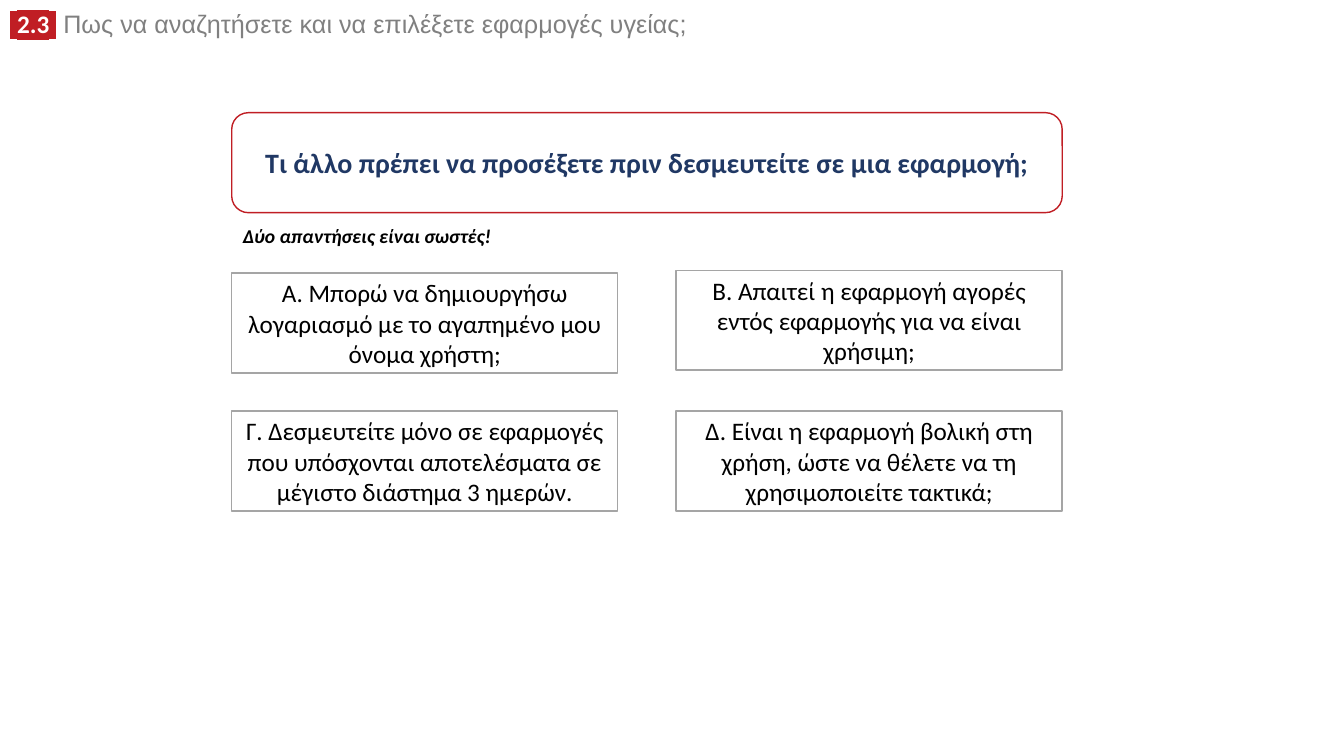
import dataclasses

import lxml.etree
import pptx
import pptx.dml.color
import pptx.enum.shapes
import pptx.enum.text
import pptx.oxml.ns
import pptx.util

Cm = pptx.util.Cm
Pt = pptx.util.Pt
RGB = pptx.dml.color.RGBColor.from_string
Align = pptx.enum.text.PP_ALIGN
Anchor = pptx.enum.text.MSO_ANCHOR
AutoSize = pptx.enum.text.MSO_AUTO_SIZE
Shape = pptx.enum.shapes.MSO_SHAPE


@dataclasses.dataclass(frozen=True)
class Theme:
    white: str = "FFFFFF"
    black: str = "000000"
    red: str = "C01E24"
    navy: str = "203864"
    title_grey: str = "808080"
    border_grey: str = "A5A5A5"
    title_font: str = "Arial"
    body_font: str = "Calibri"
    title_size: int = 18
    question_size: int = 20
    answer_size: int = 18
    hint_size: int = 14
    line_width: int = 1


THEME = Theme()

CHAPTER = "2.3"
TITLE = " Πως να αναζητήσετε και να επιλέξετε εφαρμογές υγείας;"
QUESTION = "Τι άλλο πρέπει να προσέξετε πριν δεσμευτείτε σε μια εφαρμογή;"
HINT = "Δύο απαντήσεις είναι σωστές!"
# Each answer: column, distance below the top of the quiz in cm, wording
ANSWERS = [
    (0, 4.04, "A. Μπορώ να δημιουργήσω λογαριασμό με το αγαπημένο μου όνομα χρήστη;"),
    (1, 3.97, "B. Απαιτεί η εφαρμογή αγορές εντός εφαρμογής για να είναι χρήσιμη;"),
    (0, 7.52, "Γ. Δεσμευτείτε μόνο σε εφαρμογές που υπόσχονται αποτελέσματα "
              "σε μέγιστο διάστημα 3 ημερών."),
    (1, 7.52, "Δ. Είναι η εφαρμογή βολική στη χρήση, ώστε να θέλετε να τη "
              "χρησιμοποιείτε τακτικά;"),
]


def set_attributes(target, values):
    for name, value in values.items():
        setattr(target, name, value)


def add_run(paragraph, text, color, highlight=None, **font_values):
    run = paragraph.add_run()
    run.text = text
    set_attributes(run.font, font_values)
    run.font.color.rgb = RGB(color)
    if highlight:
        qn = pptx.oxml.ns.qn
        element = lxml.etree.Element(qn("a:highlight"))
        lxml.etree.SubElement(element, qn("a:srgbClr"), val=highlight)
        run.font.fill  # the colour element precedes the highlight
        run._r.rPr.find(qn("a:latin")).addprevious(element)


def add_panel(slide, kind, box, border, text, **text_format):
    """Add a white outlined shape with centred text."""
    panel = slide.shapes.add_shape(kind, *map(Cm, box))
    panel.shadow.inherit = False
    panel.fill.solid()
    panel.fill.fore_color.rgb = RGB(THEME.white)
    panel.line.color.rgb = RGB(border)
    panel.line.width = Pt(THEME.line_width)
    set_attributes(panel.text_frame, {"word_wrap": True, "vertical_anchor": Anchor.MIDDLE})
    paragraph = panel.text_frame.paragraphs[0]
    paragraph.alignment = Align.CENTER
    add_run(paragraph, text, name=THEME.body_font, **text_format)


def place_title(slide, left, top, width, height):
    title = slide.shapes.title
    set_attributes(title, {"left": Cm(left), "top": Cm(top),
                           "width": Cm(width), "height": Cm(height)})
    set_attributes(title.text_frame, {"word_wrap": True, "vertical_anchor": Anchor.TOP,
                                      "auto_size": AutoSize.SHAPE_TO_FIT_TEXT})
    paragraph = title.text_frame.paragraphs[0]
    set_attributes(paragraph, {"alignment": Align.LEFT, "line_spacing": 0.8})
    size = Pt(THEME.title_size)
    for text, font in ((" ", THEME.title_font), (CHAPTER, THEME.body_font),
                       (" ", THEME.title_font)):
        add_run(paragraph, text, THEME.white, THEME.red, name=font, size=size, bold=True)
    add_run(paragraph, TITLE, THEME.title_grey, name=THEME.title_font, size=size, bold=False)


def add_hint(slide, left, top, width, height):
    hint = slide.shapes.add_textbox(*map(Cm, (left, top, width, height)))
    set_attributes(hint.text_frame, {"word_wrap": False,
                                     "auto_size": AutoSize.SHAPE_TO_FIT_TEXT})
    add_run(hint.text_frame.paragraphs[0], HINT, THEME.black, name=THEME.body_font,
            size=Pt(THEME.hint_size), bold=True, italic=True)


def add_quiz(slide, left, top, width, panel_height):
    """Add the question, the hint and two columns of answers."""
    add_panel(slide, Shape.ROUNDED_RECTANGLE, (left, top, width, panel_height),
              THEME.red, QUESTION, color=THEME.navy,
              size=Pt(THEME.question_size), bold=True)
    add_hint(slide, left + 0.03, top + 2.67, 6.81, 0.86)
    gap = 1.47
    answer_width = (width - gap) / 2
    for column, offset, text in ANSWERS:
        box = (left + column * (answer_width + gap), top + offset,
               answer_width, panel_height)
        add_panel(slide, Shape.RECTANGLE, box, THEME.border_grey, text,
                  color=THEME.black, size=Pt(THEME.answer_size))


def main():
    presentation = pptx.Presentation()
    set_attributes(presentation, {"slide_width": Cm(33.87), "slide_height": Cm(19.05)})
    slide = presentation.slides.add_slide(presentation.slide_layouts.get_by_name("Title Only"))
    place_title(slide, 0, 0.23, 24.18, 0.89)
    add_quiz(slide, 5.84, 2.84, 20.93, 2.52)
    presentation.save("out.pptx")


if __name__ == "__main__":
    main()
